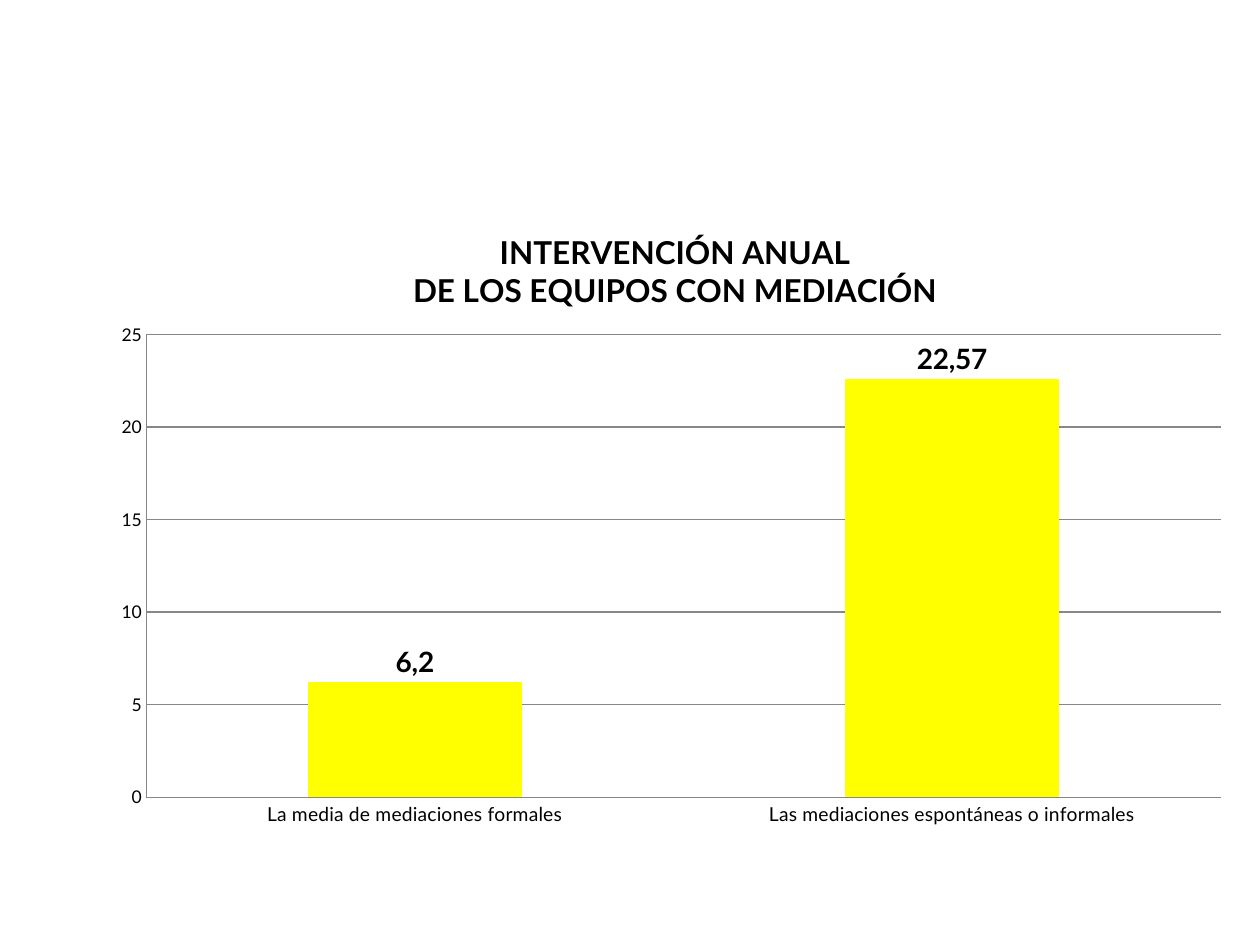
"""Build a slide with a column chart of yearly mediation work by the teams."""
from lxml import etree
from pptx import Presentation
from pptx import util as u
from pptx.chart import data as chart_data
from pptx.dml import color
from pptx.enum import chart as kinds
from pptx.oxml import ns

COLORS = {"text": "000000", "bar": "FFFF00", "grid": "878787"}
VALUES = {
    "La media de mediaciones formales": 6.2,
    "Las mediaciones espontáneas o informales": 22.57,
}
TITLE = ["INTERVENCIÓN ANUAL", "DE LOS EQUIPOS CON MEDIACIÓN"]


def set_font(font, size, bold=False):
    font.name = "Lato"
    font.size = u.Pt(size)
    font.bold = bold
    font.color.rgb = color.RGBColor.from_string(COLORS["text"])


def set_layout(parent, position, **settings):
    for old in parent.findall(ns.qn("c:layout")):
        parent.remove(old)
    layout = etree.Element(ns.qn("c:layout"))
    manual = etree.SubElement(layout, ns.qn("c:manualLayout"))
    for name, value in settings.items():
        etree.SubElement(manual, ns.qn(f"c:{name}")).set("val", str(value))
    parent.insert(position, layout)


deck = Presentation()
deck.slide_width, deck.slide_height = u.Cm(25.4), u.Cm(19.05)
page = deck.slides.add_slide(deck.slide_layouts[6])

table = chart_data.CategoryChartData()
table.categories = list(VALUES)
table.add_series("Series 1", list(VALUES.values()))
chart = page.shapes.add_chart(
    kinds.XL_CHART_TYPE.COLUMN_CLUSTERED,
    u.Cm(2.03), u.Cm(4.06), u.Cm(23.04), u.Cm(12.78), table,
).chart
set_font(chart.font, 10)
chart.has_legend = False

chart.has_title = True
frame = chart.chart_title.text_frame
frame.text = "\n".join(TITLE)
for para in frame.paragraphs:
    set_font(para.font, 18, True)
chart.chart_title.include_in_layout = False
set_layout(chart.chart_title.element, 1, xMode="edge", yMode="edge", x=0.27, y=0.04)
set_layout(
    chart.element.find(".//" + ns.qn("c:plotArea")), 0,
    layoutTarget="inner", xMode="edge", yMode="edge", x=0.04, y=0.21, w=0.94, h=0.73,
)

value_axis = chart.value_axis
value_axis.minimum_scale, value_axis.maximum_scale, value_axis.major_unit = 0, 25, 5
for axis, size in ((chart.category_axis, 11), (value_axis, 10)):
    axis.major_tick_mark = kinds.XL_TICK_MARK.NONE
    axis.minor_tick_mark = kinds.XL_TICK_MARK.NONE
    set_font(axis.tick_labels.font, size)
for line in (chart.category_axis.format.line, value_axis.format.line,
             value_axis.major_gridlines.format.line):
    line.color.rgb = color.RGBColor.from_string(COLORS["grid"])
    line.width = u.Pt(0.75)

plot = chart.plots[0]
plot.vary_by_categories = False
plot.gap_width = 150
series = plot.series[0]
series.format.fill.solid()
series.format.fill.fore_color.rgb = color.RGBColor.from_string(COLORS["bar"])
series.data_labels.show_value = True
set_font(series.data_labels.font, 16, True)
for index, value in enumerate(VALUES.values()):
    label = series.points[index].data_label
    label.position = kinds.XL_LABEL_POSITION.OUTSIDE_END
    para = label.text_frame.paragraphs[0]
    span = para.add_run()
    span.text = str(value).replace(".", ",")
    set_font(span.font, 16, True)

deck.save("out.pptx")
